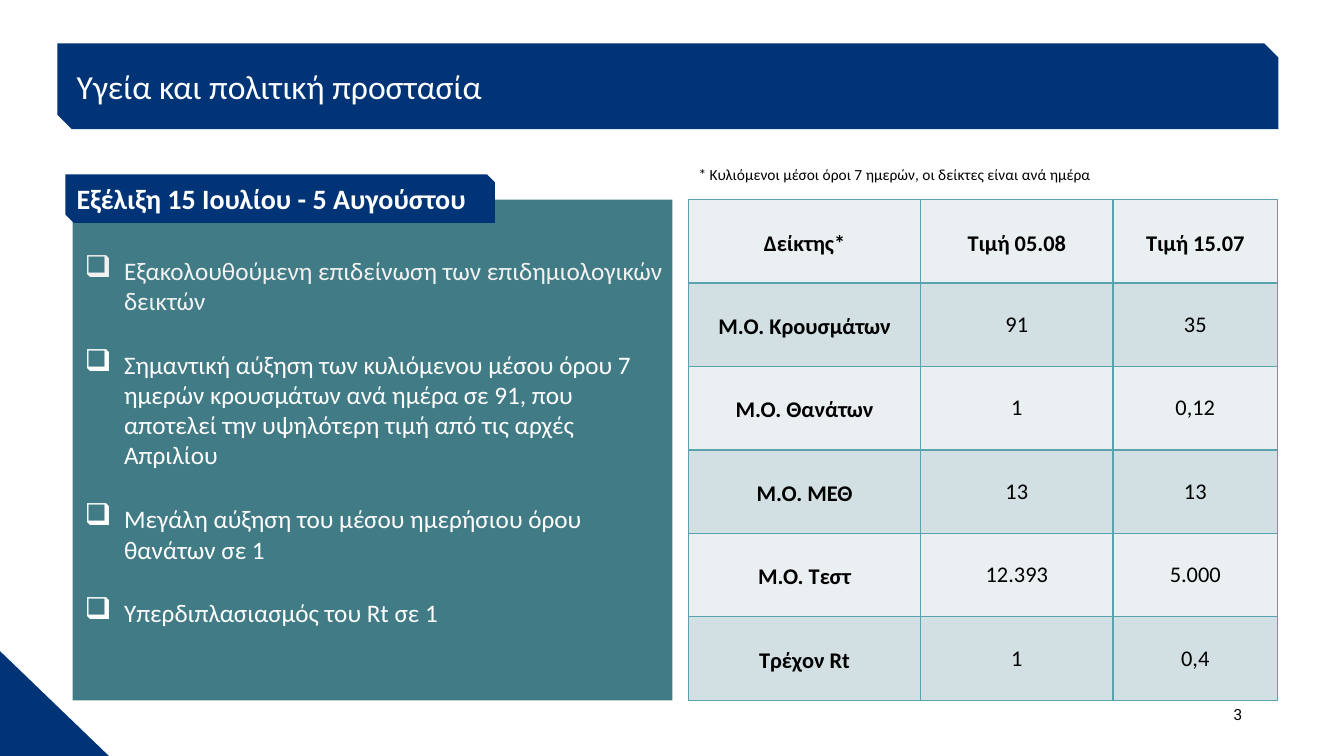
from dataclasses import dataclass

import pptx
import pptx.dml.color
import pptx.enum.shapes
import pptx.enum.text
import pptx.oxml
import pptx.oxml.ns
import pptx.util

Inches = pptx.util.Inches
Pt = pptx.util.Pt
Shape = pptx.enum.shapes.MSO_SHAPE
Anchor = pptx.enum.text.MSO_ANCHOR
Align = pptx.enum.text.PP_ALIGN

NAVY, TEAL, WHITE, BLACK = "013476", "417B85", "FFFFFF", "000000"
OFF_WHITE, PALE, PALE_DARK, BORDER = "F2F2F2", "EAF0F2", "D2E0E3", "5AA2AE"


@dataclass
class Style:
    size: float
    color: str
    bold: bool = False
    font: str = "Calibri"


@dataclass
class Panel:
    kind: int
    at: tuple[float, float, float, float]
    fill: str
    insets: tuple[float, float, float, float] = (0.1, 0.05, 0.1, 0.05)
    anchor: int = Anchor.TOP


def rgb(color: str) -> pptx.dml.color.RGBColor:
    return pptx.dml.color.RGBColor.from_string(color)


def add_run(paragraph, text: str, style: Style) -> None:
    run = paragraph.add_run()
    run.text = text
    run.font.size = Pt(style.size)
    run.font.name = style.font
    run.font.bold = style.bold
    run.font.color.rgb = rgb(style.color)


def add_panel(slide, panel: Panel):
    """Draw a filled shape and return its text frame."""
    shape = slide.shapes.add_shape(panel.kind, *map(Inches, panel.at))
    shape.shadow.inherit = False
    shape.fill.solid()
    shape.fill.fore_color.rgb = rgb(panel.fill)
    shape.line.fill.background()
    frame = shape.text_frame
    frame.word_wrap = True
    frame.vertical_anchor = panel.anchor
    (frame.margin_left, frame.margin_top,
     frame.margin_right, frame.margin_bottom) = map(Inches, panel.insets)
    frame.paragraphs[0].alignment = Align.LEFT
    return frame


def add_note(slide, at: tuple[float, float, float, float], text: str,
             style: Style, align: int = Align.LEFT) -> None:
    frame = slide.shapes.add_textbox(*map(Inches, at)).text_frame
    frame.word_wrap = True
    frame.paragraphs[0].alignment = align
    add_run(frame.paragraphs[0], text, style)


def add_bullet(paragraph, indent: float) -> None:
    properties = paragraph._p.get_or_add_pPr()
    properties.set("marL", str(Inches(indent)))
    properties.set("indent", str(-Inches(indent)))
    namespace = pptx.oxml.ns.nsdecls("a")
    for xml in (f'<a:buSzPct {namespace} val="120000"/>',
                f'<a:buChar {namespace} char="❑"/>'):
        properties.append(pptx.oxml.parse_xml(xml))


def add_borders(cell, color: str, width: float) -> None:
    properties = cell._tc.get_or_add_tcPr()
    for side in ("lnL", "lnR", "lnT", "lnB"):
        properties.append(pptx.oxml.parse_xml(
            f'<a:{side} {pptx.oxml.ns.nsdecls("a")} w="{Pt(width)}">'
            f'<a:solidFill><a:srgbClr val="{color}"/></a:solidFill></a:{side}>'))


def fill_cell(cell, text: str, fill: str, is_label: bool) -> None:
    add_borders(cell, BORDER, 1)
    cell.fill.solid()
    cell.fill.fore_color.rgb = rgb(fill)
    cell.vertical_anchor = Anchor.MIDDLE
    cell.margin_left = cell.margin_right = Inches(0.07)
    cell.margin_top = cell.margin_bottom = Inches(0)
    paragraph = cell.text_frame.paragraphs[0]
    paragraph.alignment = Align.CENTER
    if is_label:
        paragraph.line_spacing = 1.15
        paragraph.space_after = Pt(6)
    add_run(paragraph, text, Style(16, BLACK, is_label))


def add_indicators(slide, rows: list[tuple[str, str, str]]) -> None:
    widths = (2.3, 1.91, 1.63)
    height = 4.97
    table = slide.shapes.add_table(
        len(rows), len(widths), Inches(6.83), Inches(1.98),
        Inches(sum(widths)), Inches(height)).table
    for column, width in zip(table.columns, widths):
        column.width = Inches(width)
    for r, values in enumerate(rows):
        table.rows[r].height = Inches(height / len(rows))
        for c, value in enumerate(values):
            fill_cell(table.cell(r, c), value, PALE_DARK if r % 2 else PALE,
                      r == 0 or c == 0)


FINDINGS = [
    ("Εξακολουθούμενη επιδείνωση των επιδημιολογικών δεικτών", OFF_WHITE),
    ("Σημαντική αύξηση των κυλιόμενου μέσου όρου 7 ημερών κρουσμάτων ανά ημέρα "
     "σε 91, που αποτελεί την υψηλότερη τιμή από τις αρχές Απριλίου", WHITE),
    ("Μεγάλη αύξηση του μέσου ημερήσιου όρου θανάτων σε 1", WHITE),
    ("Υπερδιπλασιασμός του Rt σε 1", WHITE),
]
INDICATORS = [
    ("Δείκτης*", "Τιμή 05.08", "Τιμή 15.07"),
    ("M.O. Κρουσμάτων", "91", "35"),
    ("Μ.Ο. Θανάτων", "1", "0,12"),
    ("Μ.Ο. ΜΕΘ", "13", "13"),
    ("Μ.Ο. Τεστ", "12.393", "5.000"),
    ("Τρέχον Rt", "1", "0,4"),
]


def main() -> None:
    deck = pptx.Presentation()
    deck.slide_width, deck.slide_height = Inches(13.33), Inches(7.5)
    slide = deck.slides.add_slide(deck.slide_layouts[6])

    # Corner and title banner
    add_panel(slide, Panel(Shape.RIGHT_TRIANGLE, (0, 6.46, 1.08, 1.04), NAVY))
    title = add_panel(slide, Panel(
        Shape.SNIP_2_DIAG_RECTANGLE, (0.57, 0.43, 12.11, 0.85), NAVY,
        (0.12, 0.02, 0.12, 0.02), Anchor.MIDDLE))
    add_run(title.paragraphs[0], "Υγεία και πολιτική προστασία", Style(24, WHITE))

    # Findings
    findings = add_panel(slide, Panel(
        Shape.RECTANGLE, (0.72, 1.98, 5.95, 4.97), TEAL, (0.12, 0.55, 0.08, 0.04)))
    for i, (finding, color) in enumerate(FINDINGS):
        paragraph = findings.add_paragraph() if i else findings.paragraphs[0]
        paragraph.alignment = Align.LEFT
        add_bullet(paragraph, 0.39)
        if i:
            paragraph.space_before = Pt(12)
        paragraph.space_after = Pt(12)
        add_run(paragraph, finding, Style(18, color))

    # Period label over the findings
    period = add_panel(slide, Panel(
        Shape.SNIP_2_DIAG_RECTANGLE, (0.65, 1.73, 4.26, 0.48), NAVY,
        (0.1, 0.03, 0.07, 0.03)))
    period.margin_left = Inches(0.07)
    add_run(period.paragraphs[0], "Εξέλιξη 15 Ιουλίου - 5 Αυγούστου",
            Style(20, WHITE, True))

    # Indicator table, its footnote and the page number
    add_indicators(slide, INDICATORS)
    add_note(slide, (6.83, 1.59, 6.28, 0.29),
             "* Κυλιόμενοι μέσοι όροι 7 ημερών, οι δείκτες είναι ανά ημέρα",
             Style(11, BLACK))
    add_note(slide, (9.42, 6.95, 3, 0.4), "3",
             Style(11, BLACK, font="Roboto"), Align.RIGHT)

    deck.save("out.pptx")


if __name__ == "__main__":
    main()
